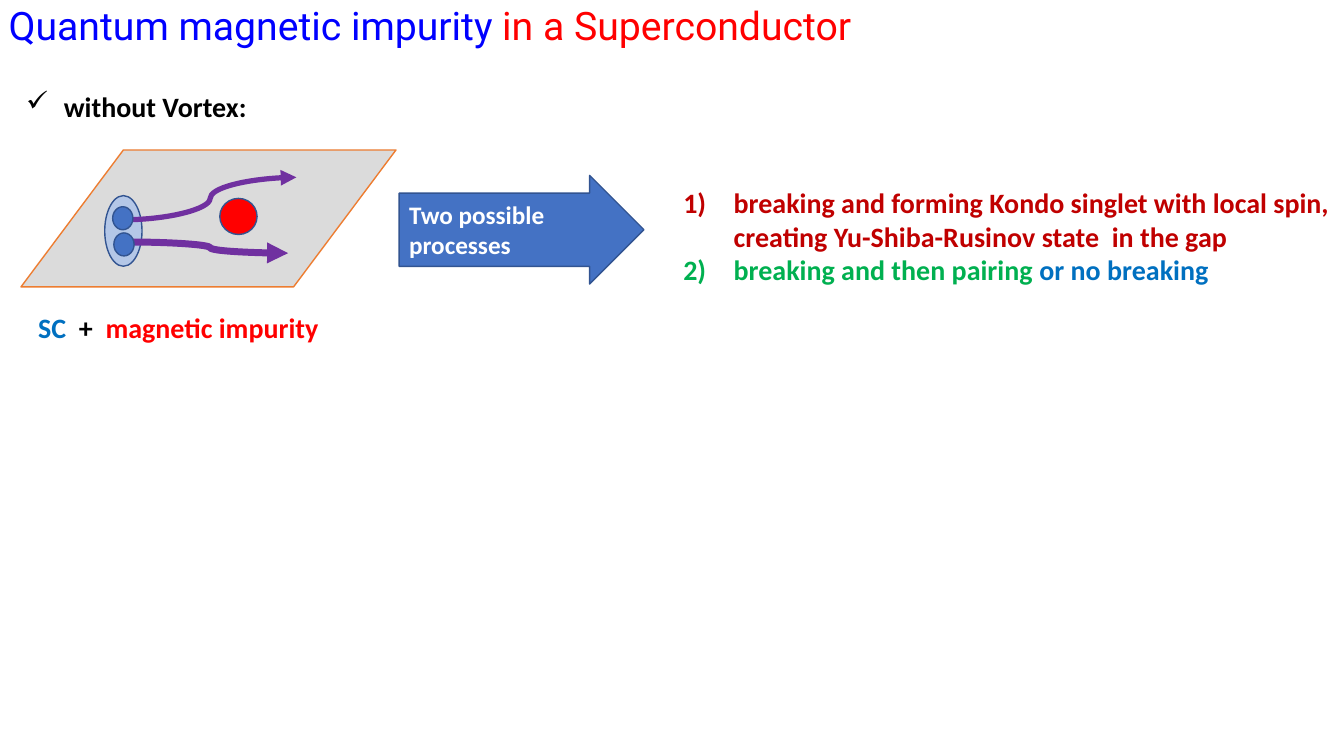
from lxml.etree import SubElement
from pptx import Presentation
from pptx.dml.color import RGBColor
from pptx.enum.shapes import MSO_CONNECTOR, MSO_SHAPE
from pptx.enum.text import MSO_ANCHOR, MSO_AUTO_SIZE, PP_ALIGN
from pptx.oxml.ns import qn
from pptx.util import Cm, Pt

COLORS = {
    "title blue": "0000FF", "red": "FF0000", "black": "000000",
    "white": "FFFFFF", "dark red": "C00000", "green": "00B050",
    "sky": "0070C0", "blue": "4472C4", "pale blue": "B4C7E7",
    "outline": "325491", "grey": "DBDBDB", "orange": "ED7D31",
    "purple": "7030A0",
}


def color(name):
    return RGBColor.from_string(COLORS[name])


def write(para, spans, size, font="Calibri", bold=True):
    """Fill a paragraph from (text, color) pairs; a vertical tab breaks the line."""
    para.alignment = PP_ALIGN.LEFT
    first_text, first_color = spans[0]
    para.text = first_text
    names = [first_color] * len(para.runs)
    for text, name in spans[1:]:
        para.add_run().text = text
        names.append(name)
    for span, name in zip(para.runs, names):
        span.font.name = font
        span.font.size = Pt(size)
        span.font.bold = bold
        span.font.color.rgb = color(name)


def add_bullet(para, indent, tag, **attributes):
    properties = para._p.get_or_add_pPr()
    properties.set("marL", str(Cm(indent)))
    properties.set("indent", str(-Cm(indent)))
    SubElement(properties, qn("a:" + tag), **attributes)


def add_text(page, place, lines, size=20, wrap=False, **style):
    box = page.shapes.add_textbox(*map(Cm, place))
    frame = box.text_frame
    frame.word_wrap = wrap
    frame.auto_size = MSO_AUTO_SIZE.SHAPE_TO_FIT_TEXT
    for index, spans in enumerate(lines):
        para = frame.add_paragraph() if index else frame.paragraphs[0]
        write(para, spans, size, **style)
    return frame.paragraphs


def add_figure(shapes, kind, place, fill, line="outline", adjustments=()):
    shape = shapes.add_shape(kind, *map(Cm, place))
    shape.shadow.inherit = False
    shape.fill.solid()
    shape.fill.fore_color.rgb = color(fill)
    shape.line.color.rgb = color(line)
    shape.line.width = Pt(1)
    for index, value in enumerate(adjustments):
        shape.adjustments[index] = value
    return shape


def add_curved_arrow(shapes, ends, width):
    curve = shapes.add_connector(MSO_CONNECTOR.CURVE, *map(Cm, ends))
    curve.line.color.rgb = color("purple")
    curve.line.width = Pt(width)
    SubElement(curve.line._get_or_add_ln(), qn("a:tailEnd"), type="triangle")
    SubElement(curve._element.spPr, qn("a:effectLst"))


def add_superconductor(page):
    """Cooper pair passing an impurity on a plane."""
    shapes = page.shapes.add_group_shape().shapes
    add_figure(shapes, MSO_SHAPE.PARALLELOGRAM, (0.53, 3.78, 9.45, 3.45),
               "grey", "orange", [0.748])
    add_figure(shapes, MSO_SHAPE.OVAL, (2.64, 4.93, 0.94, 1.78), "pale blue")
    add_figure(shapes, MSO_SHAPE.OVAL, (5.54, 5, 0.94, 0.91), "red")
    add_curved_arrow(shapes, (3.12, 5.54, 7.47, 4.47), 3.75)
    add_curved_arrow(shapes, (3.33, 6.1, 7.26, 6.38), 5)
    for left, top in ((2.84, 5.21), (2.87, 5.87)):
        add_figure(shapes, MSO_SHAPE.OVAL, (left, top, 0.51, 0.58), "blue")


def add_process_arrow(page):
    arrow = add_figure(page.shapes, MSO_SHAPE.RIGHT_ARROW,
                       (10.06, 4.42, 6.17, 2.74), "blue",
                       adjustments=[0.673, 0.5])
    arrow.text_frame.word_wrap = True
    arrow.text_frame.vertical_anchor = MSO_ANCHOR.MIDDLE
    write(arrow.text_frame.paragraphs[0],
          [("Two possible processes", "white")], 18)


def main():
    deck = Presentation()
    deck.slide_width, deck.slide_height = Cm(33.87), Cm(19.05)
    page = deck.slides.add_slide(deck.slide_layouts[6])

    # Case heading
    heading = add_text(page, (0.41, 2.13, 11.43, 1.12),
                       [[("without Vortex:", "black")]], wrap=True)
    add_bullet(heading[0], 0.95, "buChar", char="✓")

    # The two processes
    processes = add_text(page, (16.97, 4.55, 16.92, 2.82), [
        [("breaking and forming Kondo singlet with local spin,\v"
          "creating Yu-Shiba-Rusinov state  in the gap", "dark red")],
        [("breaking and then pairing ", "green"), ("or no breaking", "sky")],
    ])
    for para in processes:
        add_bullet(para, 1.27, "buAutoNum", type="arabicParenR")

    # Diagram, its caption and the arrow
    add_superconductor(page)
    add_text(page, (0.71, 7.7, 7.8, 1.12),
             [[("SC  ", "sky"), ("+  ", "black"), ("magnetic impurity", "red")]])
    add_process_arrow(page)

    # Title
    add_text(page, (-0.03, -0.08, 22.3, 1.45),
             [[("Quantum magnetic impurity ", "title blue"),
               ("in a Superconductor", "red")]],
             size=28, font="Roboto", bold=False)

    deck.save("out.pptx")


if __name__ == "__main__":
    main()
